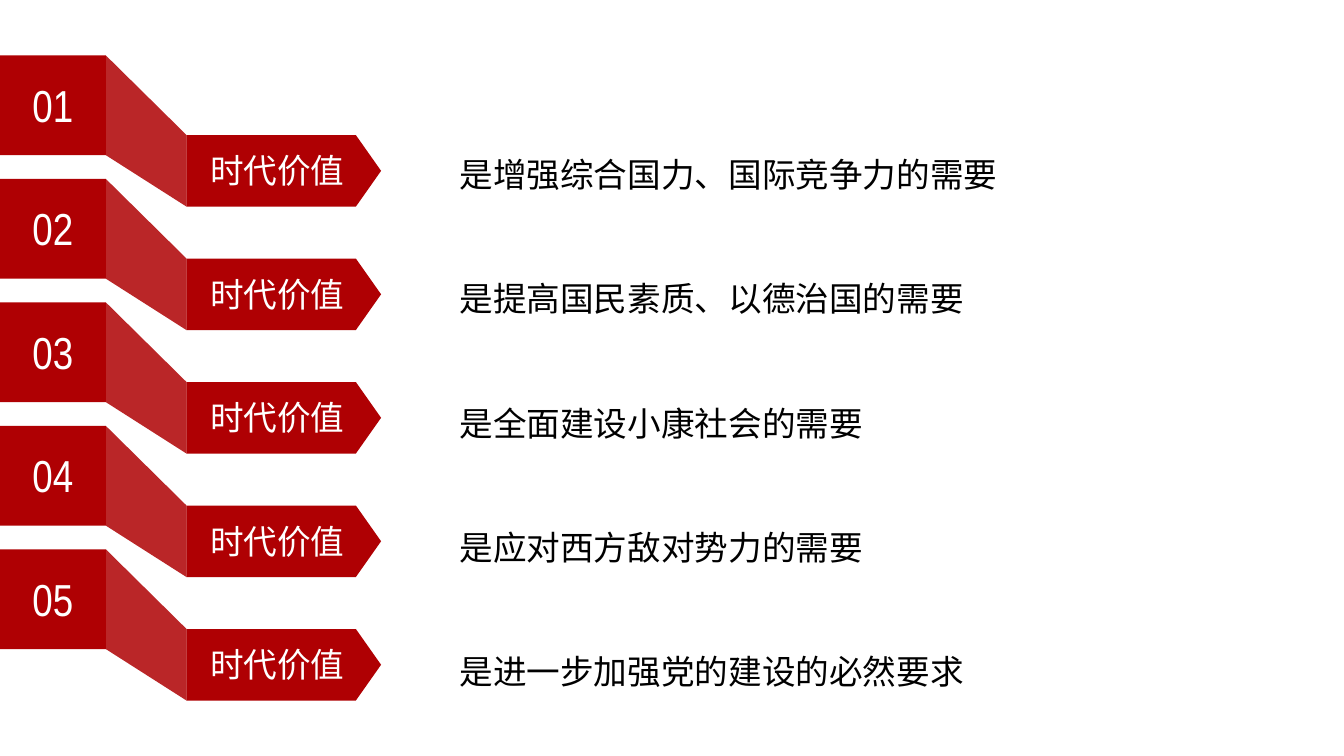
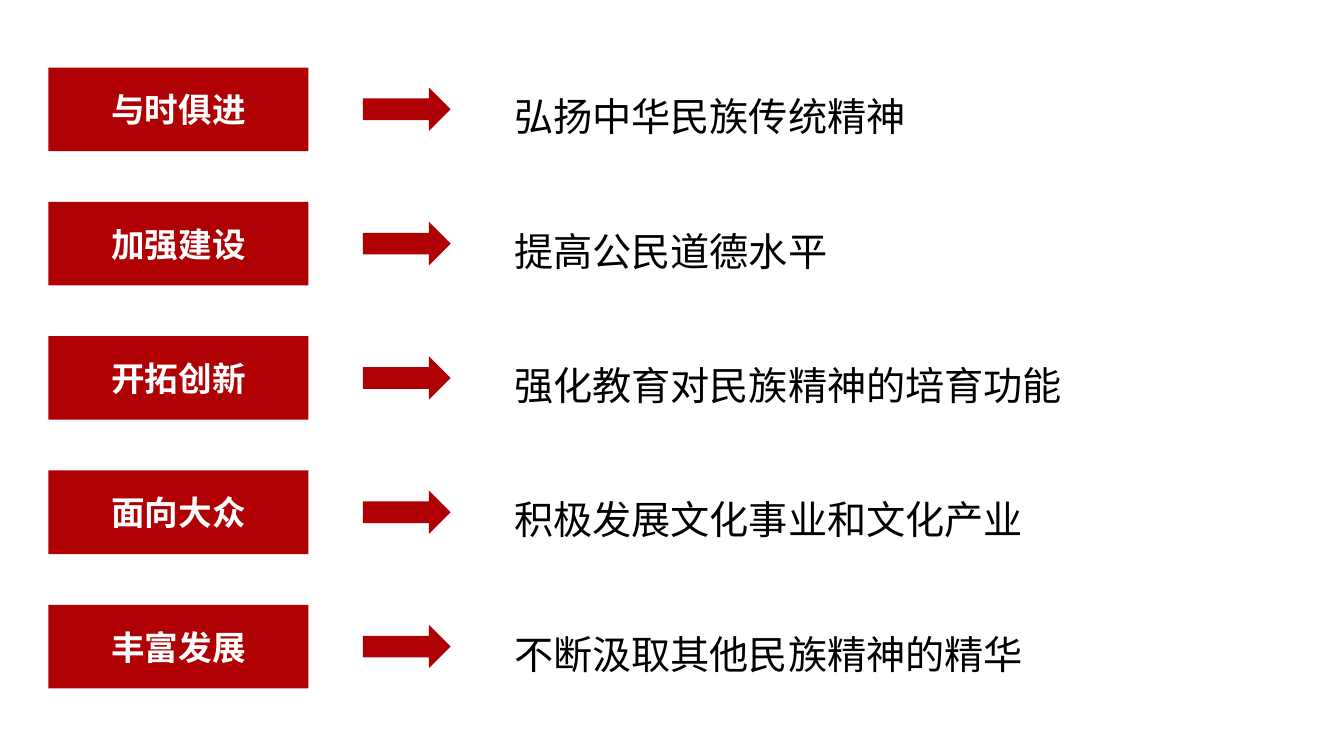
from lxml.etree import SubElement
from pptx import Presentation
from pptx.dml.color import RGBColor
from pptx.enum.shapes import MSO_SHAPE
from pptx.enum.text import MSO_ANCHOR, MSO_AUTO_SIZE, PP_ALIGN
from pptx.oxml.ns import qn
from pptx.util import Inches, Pt

RED = RGBColor(0xAF, 0x00, 0x03)
WHITE = RGBColor(0xFF, 0xFF, 0xFF)
BLACK = RGBColor(0x00, 0x00, 0x00)
NUMBER_FONT = "Arial Narrow"
TEXT_FONT = "Noto Sans CJK SC"

VALUES = [
    "是增强综合国力、国际竞争力的需要",
    "是提高国民素质、以德治国的需要",
    "是全面建设小康社会的需要",
    "是应对西方敌对势力的需要",
    "是进一步加强党的建设的必然要求",
]
MEASURES = [
    ("与时俱进", "弘扬中华民族传统精神"),
    ("加强建设", "提高公民道德水平"),
    ("开拓创新", "强化教育对民族精神的培育功能"),
    ("面向大众", "积极发展文化事业和文化产业"),
    ("丰富发展", "不断汲取其他民族精神的精华"),
]


class Deck:
    def __init__(self):
        self.file = Presentation()
        self.file.slide_width = Inches(13.33)
        self.file.slide_height = Inches(7.5)
        self.page = None
        self.shapes = None

    def new_page(self):
        self.page = self.file.slides.add_slide(self.file.slide_layouts[6])
        self.shapes = self.page.shapes

    def new_group(self):
        self.shapes = self.page.shapes.add_group_shape().shapes

    def paint(self, shape, opacity=100):
        shape.shadow.inherit = False
        shape.line.fill.background()
        shape.fill.solid()
        shape.fill.fore_color.rgb = RED
        if opacity < 100:
            color = shape.element.spPr.find(qn("a:solidFill"))[0]
            SubElement(color, qn("a:alpha")).set("val", str(opacity * 1000))
        return shape

    def block(self, kind, left, top, width, height):
        return self.paint(self.shapes.add_shape(
            kind, Inches(left), Inches(top), Inches(width), Inches(height)))

    def outline(self, points, opacity=100):
        start, *others = [(Inches(x), Inches(y)) for x, y in points]
        builder = self.shapes.build_freeform(*start)
        builder.add_line_segments(others, close=True)
        return self.paint(builder.convert_to_shape(), opacity)

    def add_words(self, frame, text, size, color, align, font=TEXT_FONT, bold=False):
        para = frame.paragraphs[0]
        para.alignment = align
        span = para.add_run()
        span.text = text
        span.font.size = Pt(size)
        span.font.bold = bold
        span.font.color.rgb = color
        span.font.name = font
        properties = span.font._element
        SubElement(properties, qn("a:ea")).set("typeface", font)
        return para

    def text(self, left, top, width, height, text, size, color=WHITE,
             align=PP_ALIGN.CENTER, font=TEXT_FONT):
        box = self.shapes.add_textbox(
            Inches(left), Inches(top), Inches(width), Inches(height))
        box.text_frame.word_wrap = True
        box.text_frame.auto_size = MSO_AUTO_SIZE.SHAPE_TO_FIT_TEXT
        return self.add_words(box.text_frame, text, size, color, align, font)

    def statement(self, left, top, height, text, size):
        para = self.text(left, top, 6, height, text, size, BLACK, PP_ALIGN.LEFT)
        para.line_spacing = 1.3

    def ribbon(self, top, number, label):
        self.new_group()
        fold, start, shoulder, tip = 1.05, 1.85, 3.53, 3.78
        upper, lower = top + 0.79, top + 1.5
        self.outline([(fold, top), (start, upper), (start, lower),
                      (fold, top + 0.99)], opacity=85)
        self.block(MSO_SHAPE.RECTANGLE, 0, top, fold, 0.99)
        self.text(0.13, top + 0.17, 0.79, 0.64, number, 32, font=NUMBER_FONT)
        self.outline([(start, upper), (shoulder, upper),
                      (tip, (upper + lower) / 2), (shoulder, lower),
                      (start, lower)])
        self.text(1.95, top + 0.89, 1.6, 0.5, label, 24)

    def measure(self, top, label, text):
        self.new_group()
        plate = self.block(MSO_SHAPE.RECTANGLE, 0.48, top, 2.58, 0.83)
        plate.text_frame.vertical_anchor = MSO_ANCHOR.MIDDLE
        self.add_words(plate.text_frame, label, 24, WHITE, PP_ALIGN.CENTER, bold=True)
        self.block(MSO_SHAPE.RIGHT_ARROW, 3.6, top + 0.2, 0.87, 0.43)
        self.statement(5, top + 0.06, 0.65, text, 28)


def spread(first, last, items):
    step = (last - first) / (len(items) - 1)
    return [(first + index * step, item) for index, item in enumerate(items)]


def main():
    deck = Deck()

    deck.new_page()
    for number, (top, _) in enumerate(spread(0.55, 5.45, VALUES), 1):
        deck.ribbon(top, f"{number:02}", "时代价值")
    deck.shapes = deck.page.shapes
    for top, text in spread(1.36, 6.29, VALUES):
        deck.statement(4.46, top, 0.63, text, 24)

    deck.new_page()
    for top, (label, text) in spread(0.67, 6, MEASURES):
        deck.measure(top, label, text)

    deck.file.save("out.pptx")


if __name__ == "__main__":
    main()
